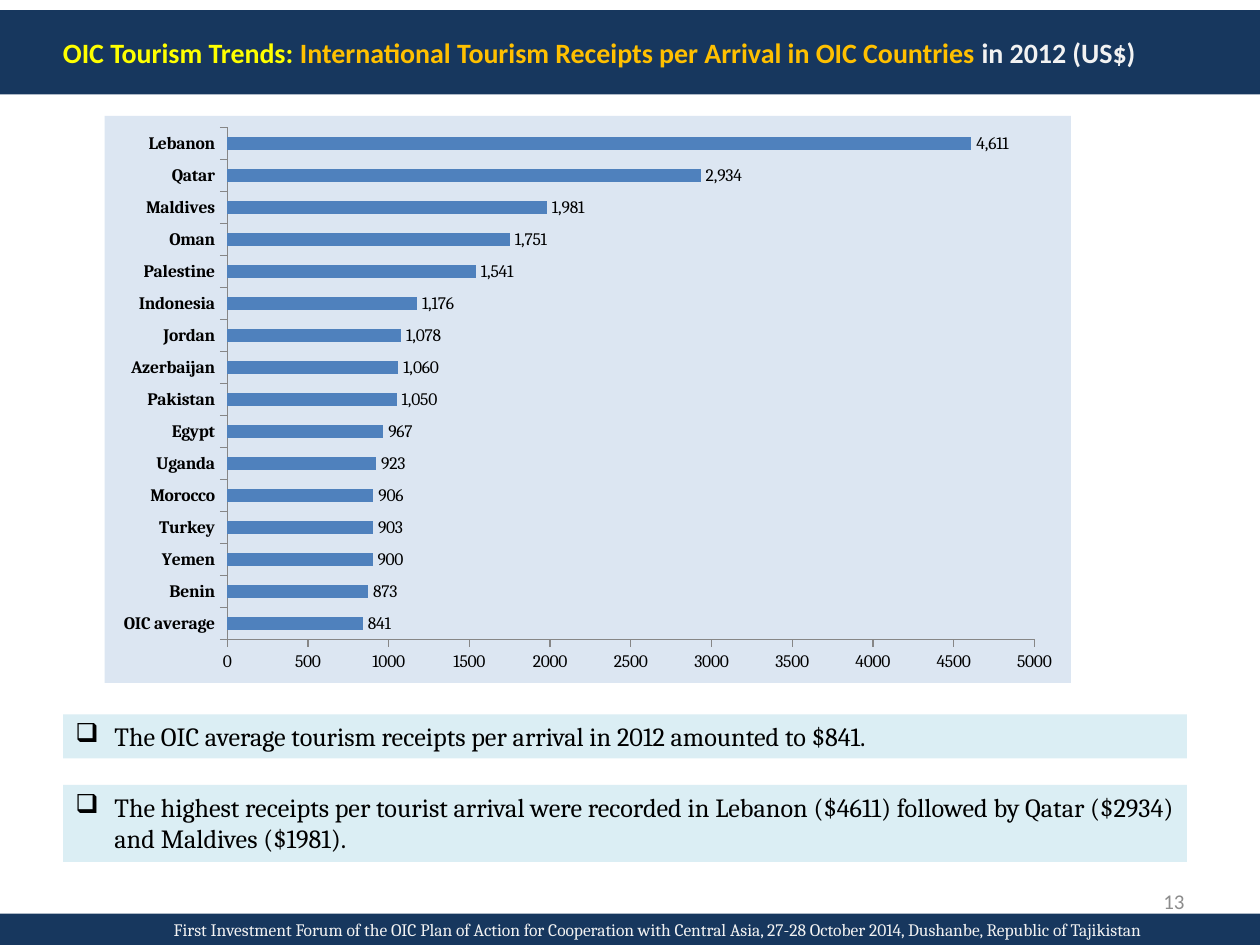
from dataclasses import dataclass

from lxml import etree
from pptx import Presentation
from pptx.chart.data import CategoryChartData
from pptx.dml.color import RGBColor
from pptx.enum.chart import XL_CHART_TYPE, XL_LABEL_POSITION, XL_TICK_MARK
from pptx.enum.text import MSO_ANCHOR, PP_ALIGN
from pptx.oxml import parse_xml
from pptx.oxml.ns import nsdecls, qn
from pptx.enum.shapes import MSO_SHAPE
from pptx.util import Inches, Pt

RECTANGLE = MSO_SHAPE.RECTANGLE
TOP, MIDDLE = MSO_ANCHOR.TOP, MSO_ANCHOR.MIDDLE
LEFT, CENTER, RIGHT, JUSTIFY = PP_ALIGN.LEFT, PP_ALIGN.CENTER, PP_ALIGN.RIGHT, PP_ALIGN.JUSTIFY
BAR_CLUSTERED = XL_CHART_TYPE.BAR_CLUSTERED
OUTSIDE_END = XL_LABEL_POSITION.OUTSIDE_END
TICK_OUTSIDE, TICK_NONE = XL_TICK_MARK.OUTSIDE, XL_TICK_MARK.NONE


@dataclass(frozen=True)
class Theme:
    navy: str = "17375E"
    yellow: str = "FFFF00"
    gold: str = "FFC000"
    pale: str = "F2F2F2"
    grey: str = "8C8C8C"
    black: str = "000000"
    note_fill: str = "DBEEF4"
    chart_fill: str = "DCE6F2"
    bar: str = "4F81BD"
    axis: str = "868686"
    sans: str = "Calibri"
    serif: str = "Cambria"
    title_size: float = 16
    note_size: float = 15
    number_size: float = 12
    small_size: float = 10


THEME = Theme()


@dataclass(frozen=True)
class Run:
    text: str
    color: str
    size: float
    font: str
    bold: bool = False


@dataclass(frozen=True)
class Box:
    left: float
    top: float
    width: float
    height: float
    runs: tuple[Run, ...]
    fill: str | None = None
    align: PP_ALIGN = LEFT
    anchor: MSO_ANCHOR = MIDDLE
    left_inset: float = 0.1
    bullet: str = ""


def title_run(text: str, color: str) -> Run:
    return Run(text, color, THEME.title_size, THEME.sans, True)


def note(top: float, height: float, text: str) -> Box:
    run = Run(text, THEME.black, THEME.note_size, THEME.serif)
    return Box(0.5, top, 8.92, height, (run,), THEME.note_fill, anchor=TOP, bullet="❑")


BOXES = (
    Box(0, 0.08, 10, 0.67, (
        title_run("OIC Tourism Trends: ", THEME.yellow),
        title_run("International Tourism Receipts per Arrival in OIC Countries ", THEME.gold),
        title_run("in 2012 (US$)", THEME.pale),
    ), THEME.navy, JUSTIFY, left_inset=0.5),
    Box(0, 7.25, 10, 0.25, (
        Run(" First Investment Forum of the OIC Plan of Action for Cooperation with Central Asia, "
            "27-28 October 2014, Dushanbe, Republic of Tajikistan",
            THEME.pale, THEME.small_size, THEME.serif),
    ), THEME.navy, CENTER, left_inset=0.5),
    Box(7.17, 6.95, 2.33, 0.4,
        (Run("13", THEME.grey, THEME.number_size, THEME.sans),), align=RIGHT),
    note(5.67, 0.35, "The OIC average tourism receipts per arrival in 2012 amounted to $841."),
    note(6.23, 0.61, "The highest receipts per tourist arrival were recorded in Lebanon ($4611) "
                     "followed by Qatar ($2934) and Maldives ($1981)."),
)

RECEIPTS = {
    "OIC average": 841, "Benin": 873, "Yemen": 900, "Turkey": 903,
    "Morocco": 906, "Uganda": 923, "Egypt": 967, "Pakistan": 1050,
    "Azerbaijan": 1060, "Jordan": 1078, "Indonesia": 1176, "Palestine": 1541,
    "Oman": 1751, "Maldives": 1981, "Qatar": 2934, "Lebanon": 4611,
}


def set_format(target, values: dict) -> None:
    for name, value in values.items():
        setattr(target, name, value)


def set_font(font, name: str, size: float, color: str, bold: bool = False) -> None:
    set_format(font, {"name": name, "size": Pt(size), "bold": bold})
    font.color.rgb = RGBColor.from_string(color)


def add_bullet(paragraph, character: str) -> None:
    properties = paragraph._p.get_or_add_pPr()
    properties.set("marL", str(Inches(0.31)))
    properties.set("indent", str(Inches(-0.31)))
    etree.SubElement(properties, qn("a:buChar")).set("char", character)


def add_box(slide, box: Box) -> None:
    bounds = [Inches(value) for value in (box.left, box.top, box.width, box.height)]
    if box.fill:
        shape = slide.shapes.add_shape(RECTANGLE, *bounds)
        shape.shadow.inherit = False
        shape.fill.solid()
        shape.fill.fore_color.rgb = RGBColor.from_string(box.fill)
        shape.line.fill.background()
    else:
        shape = slide.shapes.add_textbox(*bounds)
    frame = shape.text_frame
    set_format(frame, {
        "word_wrap": True,
        "vertical_anchor": box.anchor,
        "margin_left": Inches(box.left_inset),
        "margin_right": Inches(0.1),
        "margin_top": Inches(0.05),
        "margin_bottom": Inches(0.05),
    })
    paragraph = frame.paragraphs[0]
    paragraph.alignment = box.align
    if box.bullet:
        add_bullet(paragraph, box.bullet)
    for item in box.runs:
        run = paragraph.add_run()
        run.text = item.text
        set_font(run.font, item.font, item.size, item.color, item.bold)


def add_receipts_chart(slide) -> None:
    data = CategoryChartData()
    data.categories = list(RECEIPTS)
    data.add_series("Series 1", list(RECEIPTS.values()))
    bounds = [Inches(value) for value in (0.83, 0.92, 7.67, 4.5)]
    chart = slide.shapes.add_chart(BAR_CLUSTERED, *bounds, data).chart
    set_format(chart, {"has_legend": False, "has_title": False})
    set_font(chart.font, THEME.sans, THEME.small_size, THEME.black)
    background = parse_xml(
        f'<c:spPr {nsdecls("c", "a")}><a:solidFill><a:srgbClr val="{THEME.chart_fill}"/>'
        "</a:solidFill><a:ln><a:noFill/></a:ln></c:spPr>")
    chart._chartSpace.find(qn("c:txPr")).addprevious(background)

    for axis, bold in ((chart.category_axis, True), (chart.value_axis, False)):
        set_format(axis, {
            "has_major_gridlines": False,
            "major_tick_mark": TICK_OUTSIDE,
            "minor_tick_mark": TICK_NONE,
        })
        axis.format.line.color.rgb = RGBColor.from_string(THEME.axis)
        axis.format.line.width = Pt(0.75)
        set_font(axis.tick_labels.font, THEME.serif, THEME.small_size, THEME.black, bold)
    set_format(chart.value_axis, {"minimum_scale": 0, "maximum_scale": 5000, "major_unit": 500})
    set_format(chart.value_axis.tick_labels,
               {"number_format": "General", "number_format_is_linked": False})

    plot = chart.plots[0]
    set_format(plot, {"gap_width": 150, "vary_by_categories": False})
    series = plot.series[0]
    series.format.fill.solid()
    series.format.fill.fore_color.rgb = RGBColor.from_string(THEME.bar)
    labels = series.data_labels
    set_format(labels, {
        "show_value": True,
        "number_format": "#,##0",
        "number_format_is_linked": False,
        "position": OUTSIDE_END,
    })
    set_font(labels.font, THEME.serif, THEME.small_size, THEME.black)


def main() -> None:
    presentation = Presentation()
    set_format(presentation, {"slide_width": Inches(10), "slide_height": Inches(7.5)})
    slide = presentation.slides.add_slide(presentation.slide_layouts[6])
    for box in BOXES:
        add_box(slide, box)
    add_receipts_chart(slide)
    presentation.save("out.pptx")


if __name__ == "__main__":
    main()
